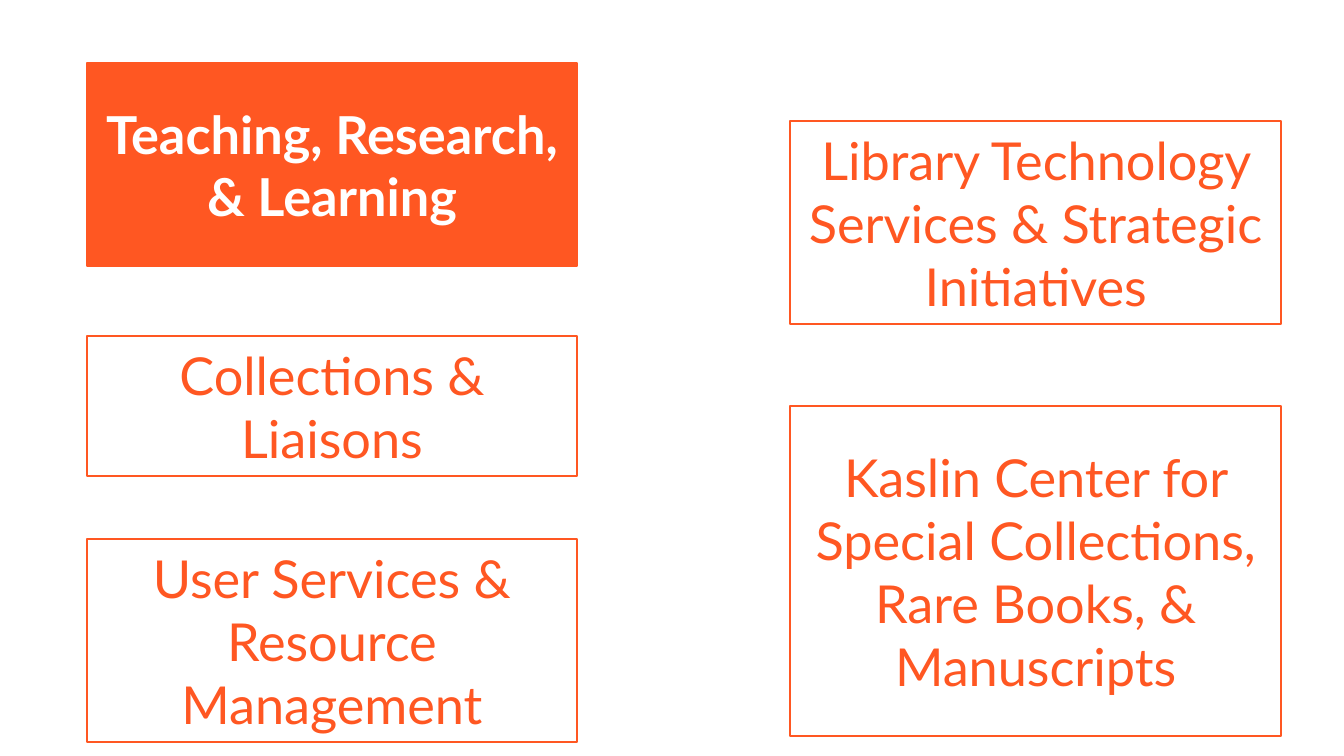
from pptx import Presentation
from pptx.dml.color import RGBColor
from pptx.enum.shapes import MSO_SHAPE
from pptx.enum.text import MSO_ANCHOR, MSO_AUTO_SIZE, PP_ALIGN
from pptx.util import Pt

RECTANGLE = MSO_SHAPE.RECTANGLE
MIDDLE = MSO_ANCHOR.MIDDLE
GROW_TO_TEXT = MSO_AUTO_SIZE.SHAPE_TO_FIT_TEXT
CENTER = PP_ALIGN.CENTER

ORANGE = RGBColor(0xFF, 0x57, 0x22)
WHITE = RGBColor(0xFF, 0xFF, 0xFF)

BLANK_LAYOUT = 6
COLUMN_WIDTH = 262.8

# Each unit: name, top, height, highlighted
LEFT_UNITS = [
    ("Teaching, Research, & Learning", 33.8, 108.7, True),
    ("Collections & Liaisons", 180, 74.9, False),
    ("User Services & Resource Management", 288.7, 108.7, False),
]
RIGHT_UNITS = [
    ("Library Technology Services & Strategic Initiatives", 65, 108.7, False),
    ("Kaslin Center for Special Collections, Rare Books, & Manuscripts",
     217.4, 177.1, False),
]


def write_text(shape, text, *, color, bold=None, size=28, font="Lato"):
    frame = shape.text_frame
    frame.word_wrap = True
    frame.auto_size = GROW_TO_TEXT
    frame.vertical_anchor = MIDDLE
    paragraph = frame.paragraphs[0]
    paragraph.alignment = CENTER
    run = paragraph.add_run()
    run.text = text
    run.font.name = font
    run.font.size = Pt(size)
    run.font.bold = bold
    run.font.color.rgb = color


def add_unit_column(slide, left, width, units):
    for name, top, height, highlighted in units:
        shape = slide.shapes.add_shape(
            RECTANGLE, Pt(left), Pt(top), Pt(width), Pt(height))
        shape.shadow.inherit = False
        shape.fill.solid()
        shape.fill.fore_color.rgb = ORANGE if highlighted else WHITE
        shape.line.color.rgb = ORANGE
        shape.line.width = Pt(1)
        write_text(shape, name, color=WHITE if highlighted else ORANGE,
                   bold=highlighted)


def main():
    presentation = Presentation()
    presentation.slide_width = Pt(720)
    presentation.slide_height = Pt(405)
    slide = presentation.slides.add_slide(
        presentation.slide_layouts[BLANK_LAYOUT])

    # Background
    slide.background.fill.solid()
    slide.background.fill.fore_color.rgb = WHITE

    # Two columns of library units
    add_unit_column(slide, 46.4, COLUMN_WIDTH, LEFT_UNITS)
    add_unit_column(slide, 423.4, COLUMN_WIDTH, RIGHT_UNITS)

    presentation.save("out.pptx")


if __name__ == "__main__":
    main()
